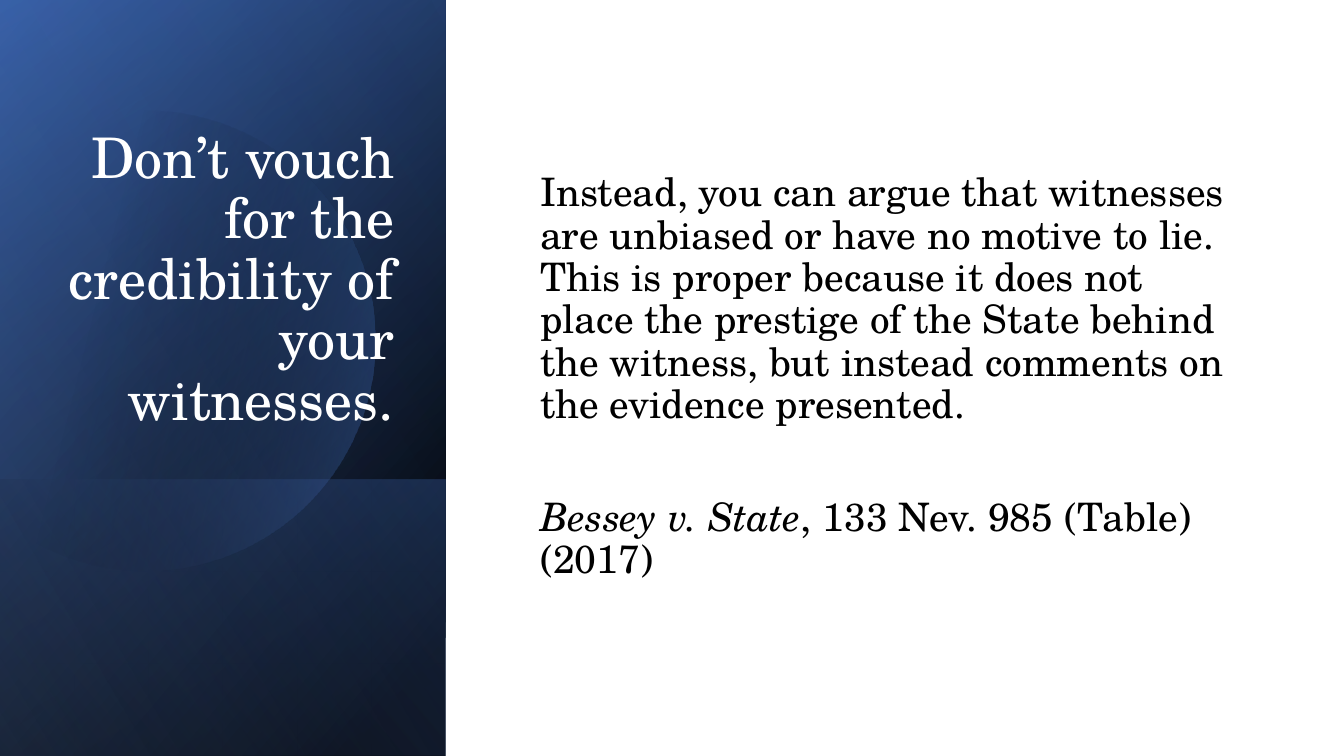
"""Build the slide on arguing the credibility of witnesses."""
from math import acos, cos, sin

from lxml.etree import SubElement
from pptx import Presentation
from pptx.dml.color import RGBColor
from pptx.enum.shapes import MSO_SHAPE as Shape
from pptx.enum.text import MSO_ANCHOR as Anchor, MSO_AUTO_SIZE as AutoSize, PP_ALIGN as Align
from pptx.oxml.ns import qn
from pptx.util import Inches, Pt

BLACK = RGBColor(0x00, 0x00, 0x00)
WHITE = RGBColor(0xFF, 0xFF, 0xFF)
NAVY = RGBColor(0x2F, 0x55, 0x97)
BLUE = RGBColor(0x44, 0x72, 0xC4)
LIGHT_BLUE = RGBColor(0x8F, 0xAA, 0xDC)

SLIDE_WIDTH, SLIDE_HEIGHT = 13.33, 7.5
PANEL_WIDTH = 4.42


class SlideBuilder:
    """Hold the style and the current slide."""

    font_name = "TeX Gyre Schola"

    def __init__(self, presentation):
        self.slide = presentation.slides.add_slide(presentation.slide_layouts[5])

    def rectangle(self, left, top, width, height, color=WHITE):
        """Add a plain filled rectangle."""
        shape = self.slide.shapes.add_shape(
            Shape.RECTANGLE, Inches(left), Inches(top), Inches(width), Inches(height))
        shape.fill.solid()
        shape.fill.fore_color.rgb = color
        shape.line.fill.background()
        shape.shadow.inherit = False
        return shape

    def gradient(self, shape, stops, angle):
        """Fill a shape with (position, color, opacity) stops in percent."""
        shape.fill.gradient()
        fill = shape.element.spPr.find(qn("a:gradFill"))
        fill.set("rotWithShape", "1")
        stop_list = fill.find(qn("a:gsLst"))
        for old_stop in list(stop_list):
            stop_list.remove(old_stop)
        for position, color, opacity in stops:
            stop = SubElement(stop_list, qn("a:gs"), pos=str(position * 1000))
            tone = SubElement(stop, qn("a:srgbClr"), val=str(color))
            SubElement(tone, qn("a:alpha"), val=str(opacity * 1000))
        linear = fill.find(qn("a:lin"))
        linear.set("ang", str(angle * 60000))
        linear.set("scaled", "0")

    def panel(self, top, stops, angle):
        """Add a turned, mirrored panel from the given top to the slide's foot."""
        height = SLIDE_HEIGHT - top
        offset = (height - PANEL_WIDTH) / 2
        shape = self.rectangle(-offset, top + offset, height, PANEL_WIDTH)
        shape.rotation = 90
        shape.element.spPr.find(qn("a:xfrm")).set("flipH", "1")
        self.gradient(shape, stops, angle)

    def disc(self, center_x, center_y, radius, stops, angle, steps=120):
        """Add a circle cut off by the slide's left edge."""
        limit = acos(-center_x / radius)
        turns = [limit * (2 * step / steps - 1) for step in range(steps + 1)]
        points = [(Inches(center_x + radius * cos(turn)), Inches(center_y + radius * sin(turn)))
                  for turn in turns]
        outline = self.slide.shapes.build_freeform(*points[0])
        outline.add_line_segments(points[1:], close=True)
        shape = outline.convert_to_shape()
        shape.line.fill.background()
        shape.shadow.inherit = False
        self.gradient(shape, stops, angle)

    def style(self, paragraph, size, color, align):
        """Set the shared look of a paragraph."""
        paragraph.alignment = align
        paragraph.line_spacing = 0.9
        paragraph.font.name = self.font_name
        paragraph.font.size = Pt(size)
        paragraph.font.color.rgb = color

    def title(self, text, left, top, width, height):
        """Move, fill and format the title placeholder, in front of the panels."""
        shape = self.slide.shapes.title
        self.slide.shapes._spTree.append(shape.element)
        shape.left, shape.top = Inches(left), Inches(top)
        shape.width, shape.height = Inches(width), Inches(height)
        frame = shape.text_frame
        frame.text = text
        frame.word_wrap = True
        frame.auto_size = AutoSize.NONE
        frame.vertical_anchor = Anchor.BOTTOM
        self.style(frame.paragraphs[0], 40, WHITE, Align.RIGHT)

    def body(self, paragraphs, left, top, width, height):
        """Add a text box of (space before, runs) paragraphs."""
        frame = self.slide.shapes.add_textbox(
            Inches(left), Inches(top), Inches(width), Inches(height)).text_frame
        frame.word_wrap = True
        frame.vertical_anchor = Anchor.MIDDLE
        for index, (space_before, runs) in enumerate(paragraphs):
            paragraph = frame.add_paragraph() if index else frame.paragraphs[0]
            self.style(paragraph, 28, BLACK, Align.LEFT)
            paragraph.space_before = Pt(space_before)
            for text, italic in runs:
                run = paragraph.add_run()
                run.text = text
                run.font.italic = italic


def main():
    """Build and save the presentation."""
    presentation = Presentation()
    presentation.slide_width = Inches(SLIDE_WIDTH)
    presentation.slide_height = Inches(SLIDE_HEIGHT)
    builder = SlideBuilder(presentation)
    builder.rectangle(0, 0, SLIDE_WIDTH, SLIDE_HEIGHT)
    builder.panel(0, [(8, BLACK, 100), (100, NAVY, 100)], 50)
    builder.panel(0, [(0, BLACK, 0), (99, BLUE, 46)], 30)
    builder.panel(4.76, [(2, BLUE, 29), (100, BLACK, 30)], 130)
    builder.disc(1.44, 3.38, 2.28, [(29, BLACK, 0), (100, BLUE, 43)], 14)
    builder.panel(0, [(0, BLACK, 0), (99, LIGHT_BLUE, 11)], 120)
    builder.title("Don’t vouch for the credibility of your witnesses.", 0.51, 0.64, 3.5, 3.7)
    argument = ("Instead, you can argue that witnesses are unbiased or have no motive to lie. "
                "This is proper because it does not place the prestige of the State behind "
                "the witness, but instead comments on the evidence presented.")
    citation = [("Bessey v. State", True), (", 133 Nev. 985 (Table)(2017)", False)]
    builder.body([(10, [(argument, False)]), (50, citation)], 5.26, 0.71, 7.17, 6.07)
    presentation.save("out.pptx")


if __name__ == "__main__":
    main()
